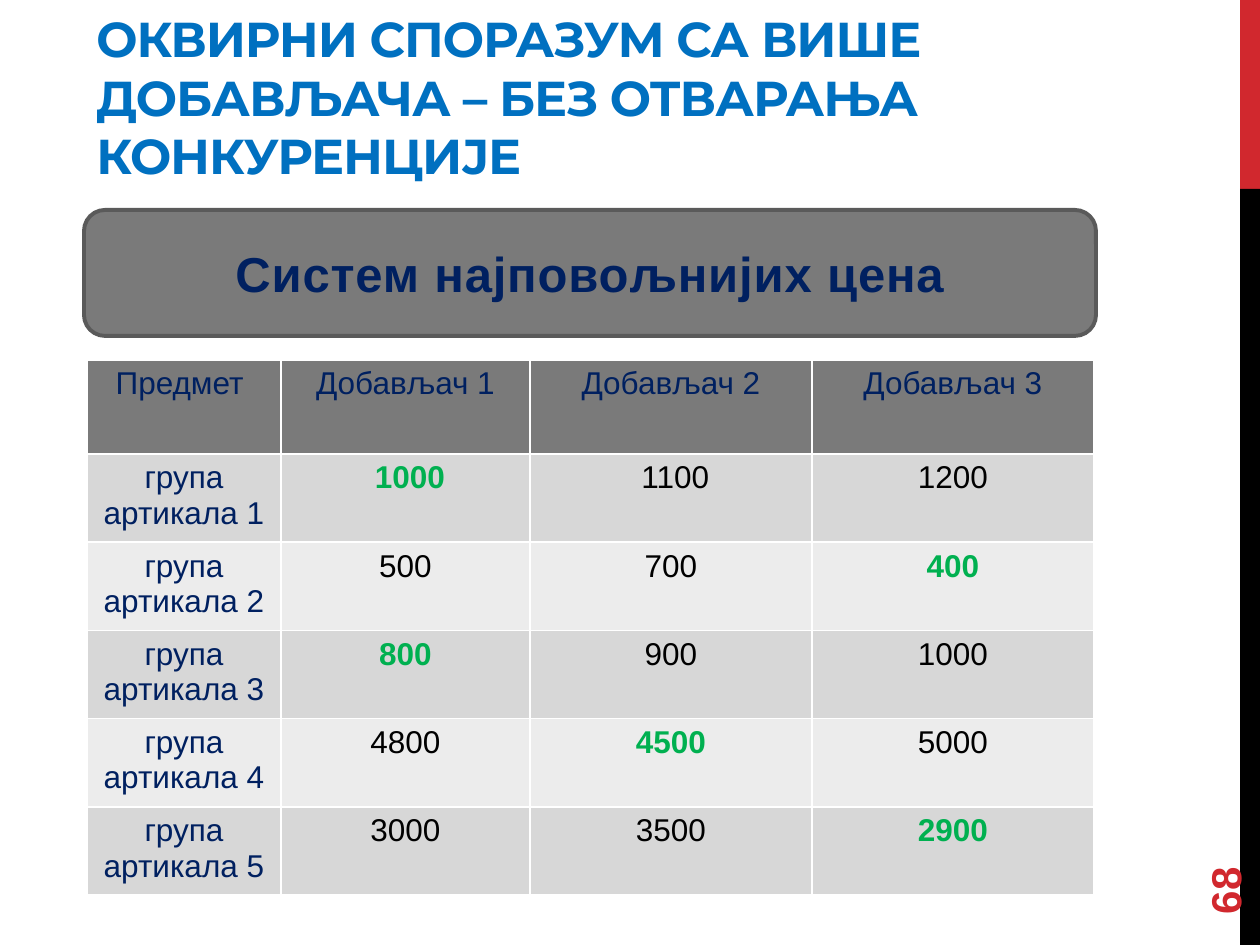
from lxml import etree
from pptx import Presentation
from pptx import util as u
from pptx.dml.color import RGBColor
from pptx.enum import shapes, text
from pptx.oxml.ns import qn

SCALE = 914400 / 126  # EMU per px
COLORS = {
    "red": "D1282E", "black": "000000", "white": "FFFFFF", "blue": "0070C0",
    "navy": "002060", "green": "00B050", "gray": "7A7A7A", "outline": "5A5A5A",
    "band_dark": "D7D7D7", "band_light": "ECECEC",
}
HEADER = ["Предмет ", "Добављач 1", "Добављач 2", "Добављач 3"]
PRICES = [
    [" 1000", " 1100", "1200"],
    ["500", "700", "400"],
    ["800", "900", "1000"],
    ["4800", "4500", "5000"],
    ["3000", "3500", "2900"],
]
COL_WIDTHS = [194, 249, 282, 282]
CENTER = text.PP_ALIGN.CENTER


def px(n):
    return u.Emu(round(n * SCALE))


def rgb(name):
    return RGBColor.from_string(COLORS[name])


def write(tf, words, size, color, bold=False, font="Arial", align=None, spacing=None):
    tf.text = words
    p = tf.paragraphs[0]
    p.alignment = align
    r = p.runs[0]
    r.font.size, r.font.bold, r.font.name = u.Pt(size), bold, font
    r.font.color.rgb = rgb(color)
    if spacing is not None:
        r._r.get_or_add_rPr().set("spc", str(spacing))


def add_box(s, kind, x, y, w, h, fill):
    sp = s.shapes.add_shape(kind, px(x), px(y), px(w), px(h))
    sp.shadow.inherit = False
    sp.fill.solid()
    sp.fill.fore_color.rgb = rgb(fill)
    sp.line.fill.background()
    return sp


def add_text_box(s, x, y, w, h, anchor):
    sp = s.shapes.add_textbox(px(x), px(y), px(w), px(h))
    sp.text_frame.word_wrap = True
    sp.text_frame.vertical_anchor = anchor
    return sp


def add_side_bar(s, x, y, w, h):
    red_h = h // 5
    rect = shapes.MSO_SHAPE.RECTANGLE
    add_box(s, rect, x, y, w, red_h, "red")
    add_box(s, rect, x, y + red_h, w, h - red_h, "black")


def add_title(s, x, y, w, h):
    sp = add_text_box(s, x, y, w, h, text.MSO_ANCHOR.BOTTOM)
    write(sp.text_frame,
          "ОКВИРНИ СПОРАЗУМ СА ВИШЕ ДОБАВЉАЧА – БЕЗ ОТВАРАЊА КОНКУРЕНЦИЈЕ",
          28, "blue", True, "Montserrat", spacing=-60)


def add_banner(s, x, y, w, h):
    sp = add_box(s, shapes.MSO_SHAPE.ROUNDED_RECTANGLE, x, y, w, h, "gray")
    sp.line.color.rgb = rgb("outline")
    sp.line.width = u.Pt(2.25)
    sp.text_frame.word_wrap = True
    sp.text_frame.vertical_anchor = text.MSO_ANCHOR.MIDDLE
    write(sp.text_frame, "Систем најповољнијих цена", 28, "navy", True,
          align=CENTER, spacing=50)


def style_cell(cell, fill):
    """Give the cell a solid fill and thin white borders."""
    tcPr = cell._tc.get_or_add_tcPr()
    for side in ("a:lnL", "a:lnR", "a:lnT", "a:lnB"):
        ln = etree.SubElement(tcPr, qn(side), w=str(u.Pt(1)))
        solid = etree.SubElement(ln, qn("a:solidFill"))
        etree.SubElement(solid, qn("a:srgbClr"), val=COLORS["white"])
    cell.fill.solid()
    cell.fill.fore_color.rgb = rgb(fill)


def add_price_table(s, x, y, w, h):
    """Place the price grid, with the lowest price of each row in bold green."""
    header_h = 94
    row_h = (h - header_h) / len(PRICES)
    table = s.shapes.add_table(len(PRICES) + 1, len(HEADER),
                               px(x), px(y), px(w), px(h)).table
    for col, width in zip(table.columns, COL_WIDTHS):
        col.width = px(width)
    for i, row in enumerate(table.rows):
        row.height = px(row_h if i else header_h)

    for cell, words in zip(table.rows[0].cells, HEADER):
        style_cell(cell, "gray")
        write(cell.text_frame, words, 18, "navy", align=CENTER)
    for i, prices in enumerate(PRICES, 1):
        lowest = min(prices, key=int)
        for j, words in enumerate([f"група артикала {i}"] + prices):
            cell = table.cell(i, j)
            best = words == lowest
            color = "navy" if j == 0 else "green" if best else "black"
            style_cell(cell, "band_dark" if i % 2 else "band_light")
            write(cell.text_frame, words, 18, color, best, align=CENTER)


def add_page_number(s, x, y, w, h):
    sp = add_text_box(s, x, y, w, h, text.MSO_ANCHOR.MIDDLE)
    sp.rotation = 270
    write(sp.text_frame, "68", 24, "red", True)


def main():
    prs = Presentation()
    prs.slide_width, prs.slide_height = px(1260), px(945)
    s = prs.slides.add_slide(prs.slide_layouts[6])
    add_side_bar(s, 1240, 0, 20, 945)
    add_title(s, 84, 55, 1103, 136)
    add_price_table(s, 87, 360, sum(COL_WIDTHS), 510)
    add_page_number(s, 1134, 811, 181, 50)
    add_banner(s, 84, 210, 1012, 126)
    prs.save("out.pptx")


if __name__ == "__main__":
    main()
